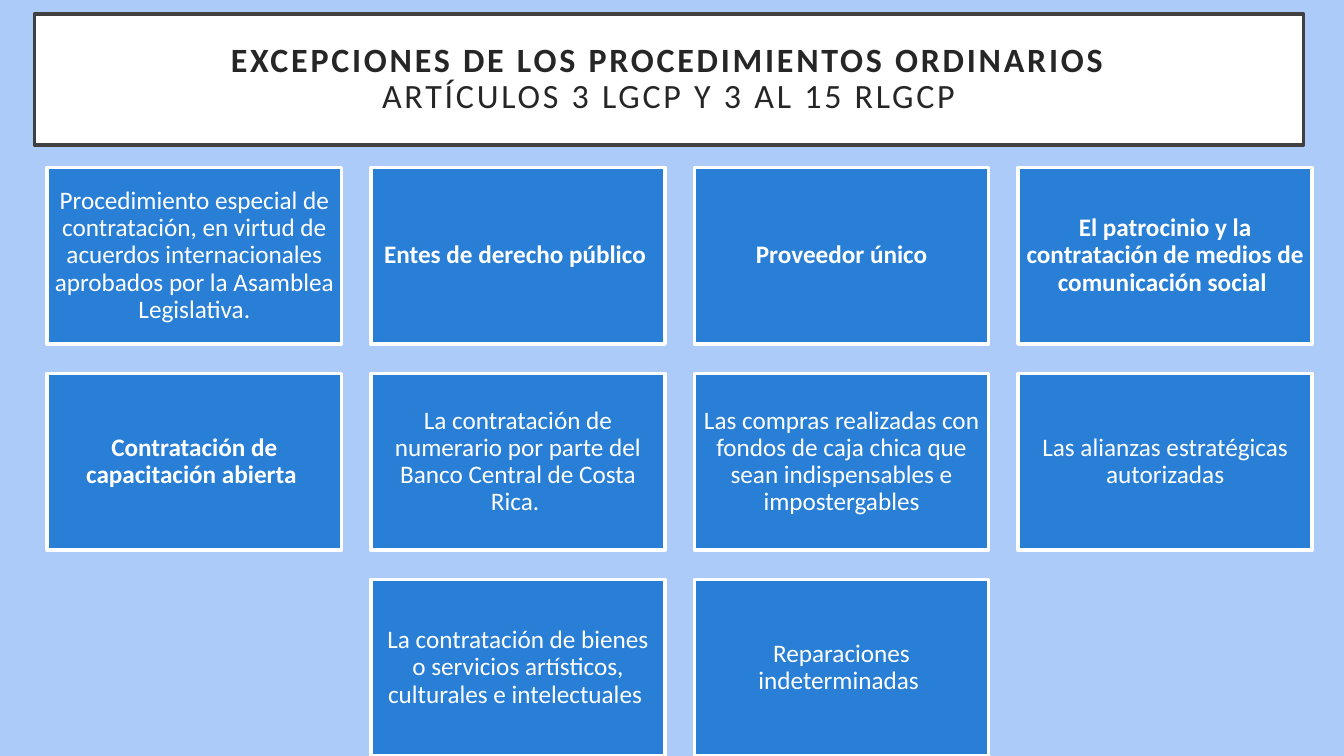
import pptx
import pptx.dml.color
import pptx.enum.shapes
import pptx.enum.text
import pptx.util

Cm = pptx.util.Cm
Pt = pptx.util.Pt

COLORS = {
    "background": "ACCBF9",
    "paper": "FFFFFF",
    "frame": "404040",
    "heading": "262626",
    "card": "297FD5",
}

EXCEPTIONS = [
    [
        ("Procedimiento especial de contratación, en virtud de acuerdos "
         "internacionales aprobados por la Asamblea Legislativa.", False),
        ("Entes de derecho público ", True),
        ("Proveedor único", True),
        ("El patrocinio y la contratación de medios de comunicación social ", True),
    ],
    [
        ("Contratación de capacitación abierta ", True),
        ("La contratación de numerario por parte del Banco Central de Costa Rica. ", False),
        ("Las compras realizadas con fondos de caja chica que sean "
         "indispensables e impostergables", False),
        ("Las alianzas estratégicas autorizadas", False),
    ],
    [
        ("La contratación de bienes o servicios artísticos, culturales e "
         "intelectuales ", False),
        ("Reparaciones indeterminadas ", False),
    ],
]


def rgb(name):
    """Return the named palette colour."""
    return pptx.dml.color.RGBColor.from_string(COLORS[name])


def add_panel(slide, left, top, width, height, fill, line, inset):
    """Add an outlined rectangle, in centimetres, and return its text frame."""
    panel = slide.shapes.add_shape(
        pptx.enum.shapes.MSO_SHAPE.RECTANGLE, Cm(left), Cm(top), Cm(width), Cm(height))
    panel.shadow.inherit = False
    panel.fill.solid()
    panel.fill.fore_color.rgb = rgb(fill)
    panel.line.color.rgb = rgb(line)
    panel.line.width = Pt(2.5)
    frame = panel.text_frame
    frame.word_wrap = True
    frame.vertical_anchor = pptx.enum.text.MSO_ANCHOR.MIDDLE
    frame.margin_left = frame.margin_right = Cm(inset)
    frame.margin_top = frame.margin_bottom = Cm(inset)
    paragraph = frame.paragraphs[0]
    paragraph.alignment = pptx.enum.text.PP_ALIGN.CENTER
    paragraph.line_spacing = 0.9
    return frame


def write(paragraph, text, *, size, color, bold=False, tracking=0):
    """Append a formatted run to the paragraph."""
    run = paragraph.add_run()
    run.text = text
    run.font.name = "Calibri"
    run.font.size = Pt(size)
    run.font.bold = bold
    run.font.color.rgb = rgb(color)
    if tracking:
        run.font._element.set("spc", str(tracking * 100))


def add_heading(slide, left, top, width, height):
    """Place the framed two-line heading in the given box."""
    heading = add_panel(slide, left, top, width, height, "paper", "frame", 0.5).paragraphs[0]
    style = {"size": 24.3, "color": "heading", "tracking": 2}
    write(heading, "EXCEPCIONES DE LOS PROCEDIMIENTOS ORDINARIOS", bold=True, **style)
    heading.add_line_break()
    write(heading, "ARTÍCULOS 3 LGCP Y 3 AL 15 RLGCP", **style)


def add_exceptions(slide, left, top, width, height, gap=0.74):
    """Fill the given box with rows of cards, centring the shorter rows."""
    columns = max(len(row) for row in EXCEPTIONS)
    card_width = (width + gap) / columns - gap
    card_height = (height + gap) / len(EXCEPTIONS) - gap
    for row_index, row in enumerate(EXCEPTIONS):
        first_column = (columns - len(row)) / 2
        for column, (exception, bold) in enumerate(row, 0):
            card = add_panel(
                slide,
                left + (first_column + column) * (card_width + gap),
                top + row_index * (card_height + gap),
                card_width, card_height, "card", "paper", 0.18)
            write(card.paragraphs[0], exception, size=18, color="paper", bold=bold)


def main():
    """Build and save the slide."""
    deck = pptx.Presentation()
    deck.slide_width = Cm(33.87)
    deck.slide_height = Cm(19.05)
    slide = deck.slides.add_slide(deck.slide_layouts[6])
    slide.background.fill.solid()
    slide.background.fill.fore_color.rgb = rgb("background")
    add_heading(slide, 0.87, 0.35, 31.98, 3.31)
    add_exceptions(slide, 1.19, 4.22, 31.88, 14.83)
    deck.save("out.pptx")


if __name__ == "__main__":
    main()
